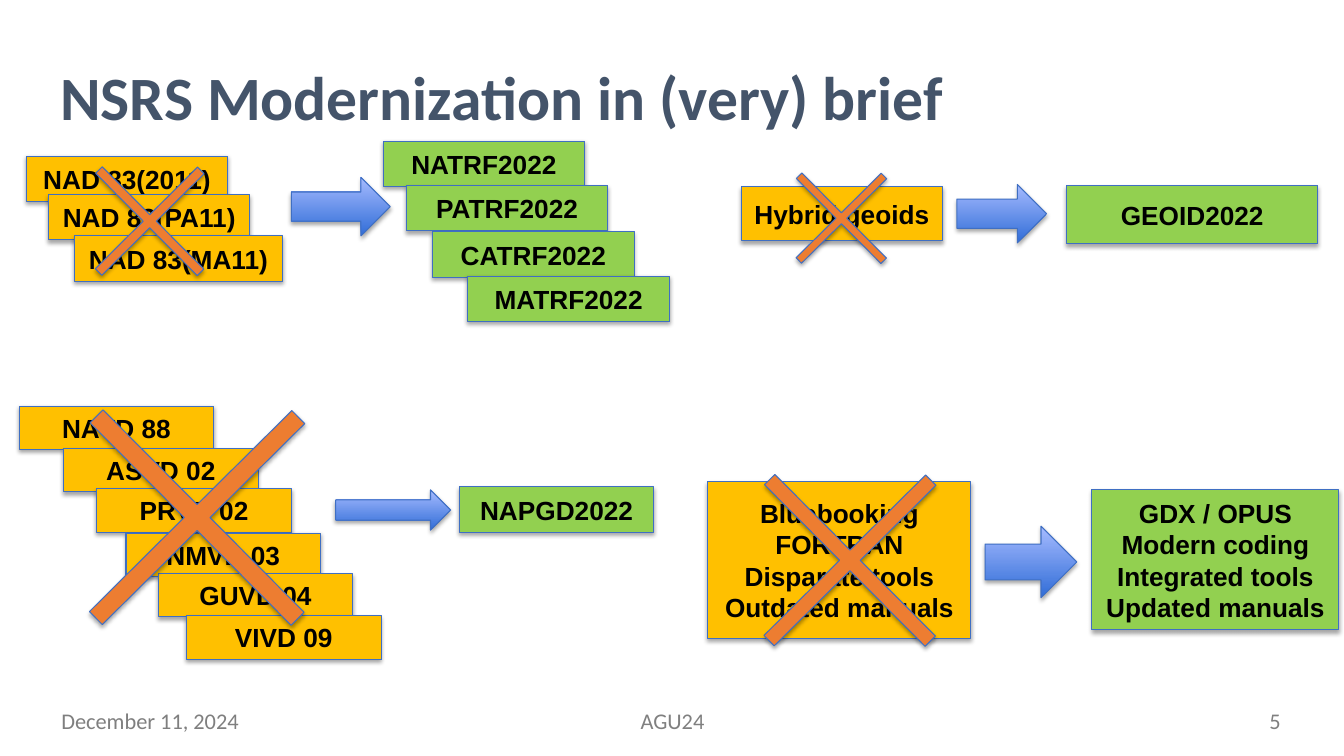
import pptx
import pptx.util
from lxml import etree
from pptx.dml.color import RGBColor
from pptx.enum.shapes import MSO_SHAPE
from pptx.enum.text import MSO_ANCHOR, PP_ALIGN
from pptx.oxml.ns import qn
from pptx.util import Inches

AMBER = RGBColor(0xFF, 0xC0, 0x00)
GREEN = RGBColor(0x92, 0xD0, 0x50)
ORANGE = RGBColor(0xED, 0x7D, 0x31)
OUTLINE = RGBColor(0x3F, 0x6F, 0xC3)
ARROW_DARK = RGBColor(0x31, 0x6D, 0xD7)
ARROW_LIGHT = RGBColor(0xA6, 0xBB, 0xFF)
BLACK = RGBColor(0x00, 0x00, 0x00)
SLATE = RGBColor(0x44, 0x54, 0x6A)
GRAY = RGBColor(0x80, 0x80, 0x80)
DATE_GRAY = RGBColor(0x7F, 0x7F, 0x7F)

TITLE = "NSRS Modernization in (very) brief"

# Boxes: lines of text, (left, top, width, height)
OLD_FRAMES = [
    (["NAD 83(2011)"], (0.26, 1.55, 2, 0.45)),
    (["NAD 83(PA11)"], (0.48, 1.93, 2, 0.45)),
    (["NAD 83(MA11)"], (0.74, 2.34, 2.06, 0.45)),
]
NEW_FRAMES = [
    (["NATRF2022"], (3.8, 1.4, 2, 0.45)),
    (["PATRF2022"], (4.03, 1.84, 2, 0.45)),
    (["CATRF2022"], (4.29, 2.3, 2, 0.45)),
    (["MATRF2022"], (4.64, 2.74, 2, 0.45)),
]
OLD_HEIGHTS = [
    (["NAVD 88"], (0.19, 4.03, 1.93, 0.43)),
    (["ASVD 02"], (0.63, 4.45, 1.93, 0.43)),
    (["PRVD 02"], (0.96, 4.85, 1.93, 0.43)),
    (["NMVD 03"], (1.25, 5.29, 1.93, 0.43)),
    (["GUVD 04"], (1.57, 5.69, 1.93, 0.43)),
    (["VIVD 09"], (1.85, 6.11, 1.93, 0.43)),
]
STACKS = [(OLD_FRAMES, AMBER), (NEW_FRAMES, GREEN), (OLD_HEIGHTS, AMBER)]
SINGLE_BOXES = [
    (["Hybrid geoids"], (7.35, 1.85, 2, 0.54), AMBER),
    (["GEOID2022"], (10.58, 1.84, 2.49, 0.58), GREEN),
    (["NAPGD2022"], (4.56, 4.83, 1.92, 0.45), GREEN),
    (["Bluebooking", "FORTRAN", "Disparate tools", "Outdated manuals"],
     (7.02, 4.78, 2.61, 1.55), AMBER),
    (["GDX / OPUS", "Modern coding", "Integrated tools", "Updated manuals"],
     (10.83, 4.86, 2.45, 1.39), GREEN),
]
ARROWS = [
    (2.89, 1.76, 0.98, 0.58),
    (9.49, 1.83, 0.89, 0.58),
    (3.33, 4.86, 1.14, 0.4),
    (9.77, 5.22, 0.91, 0.71),
]
# Crosses: left, top, side
CROSSES = [(0.77, 1.48, 1.43), (7.75, 1.57, 1.19), (0.54, 3.72, 2.83), (7.3, 4.43, 2.26)]
FOOTERS = [
    ("December 11, 2024", (0.51, 6.95, 3.11, 0.4), PP_ALIGN.LEFT, DATE_GRAY),
    ("AGU24", (4.56, 6.95, 4.22, 0.4), PP_ALIGN.CENTER, GRAY),
    ("5", (9.69, 6.95, 3.11, 0.4), PP_ALIGN.RIGHT, GRAY),
]


def write_lines(shape, lines, font_name, size, color, bold, alignment):
    frame = shape.text_frame
    frame.word_wrap = True
    frame.vertical_anchor = MSO_ANCHOR.MIDDLE
    frame.text = "\n".join(lines)
    for paragraph in frame.paragraphs:
        paragraph.alignment = alignment
        paragraph.font.name = font_name
        paragraph.font.size = pptx.util.Pt(size)
        paragraph.font.color.rgb = color
        paragraph.font.bold = bold


def add_outlined(shapes, kind, place, color=None):
    """Add a preset shape with the common outline and soft shadow."""
    shape = shapes.add_shape(kind, *map(Inches, place))
    if color is not None:
        shape.fill.solid()
        shape.fill.fore_color.rgb = color
    shape.line.color.rgb = OUTLINE
    shape.line.width = pptx.util.Pt(0.75)
    shape.shadow.inherit = False
    effects = shape.element.spPr.find(qn("a:effectLst"))
    shadow = etree.SubElement(effects, qn("a:outerShdw"), blurRad="39400",
                              dist="22900", dir="5400000", rotWithShape="0")
    shadow_color = etree.SubElement(shadow, qn("a:srgbClr"), val="000000")
    etree.SubElement(shadow_color, qn("a:alpha"), val="35000")
    return shape


def add_box(shapes, lines, place, color):
    box = add_outlined(shapes, MSO_SHAPE.RECTANGLE, place, color)
    write_lines(box, lines, "Arial", 18.7, BLACK, True, PP_ALIGN.CENTER)


def add_arrow(shapes, place):
    arrow = add_outlined(shapes, MSO_SHAPE.RIGHT_ARROW, place)
    arrow.fill.gradient()
    arrow.fill.gradient_angle = 90
    for stop, color, position in zip(arrow.fill.gradient_stops,
                                     (ARROW_DARK, ARROW_LIGHT), (0, 1)):
        stop.color.rgb = color
        stop.position = position


def add_cross(shapes, left, top, side):
    cross = add_outlined(shapes, MSO_SHAPE.CROSS, (left, top, side, side), ORANGE)
    cross.adjustments[0] = 0.468
    cross.rotation = 45.2


def main():
    presentation = pptx.Presentation()
    presentation.slide_width = Inches(13.33)
    presentation.slide_height = Inches(7.5)
    slide = presentation.slides.add_slide(presentation.slide_layouts[6])
    shapes = slide.shapes

    title = shapes.add_textbox(*map(Inches, (0.5, 0.5, 12.3, 1)))
    write_lines(title, [TITLE], "Calibri", 44, SLATE, True, PP_ALIGN.LEFT)
    title.text_frame.paragraphs[0].line_spacing = 0.9

    for place in ARROWS:
        add_arrow(shapes, place)
    for lines, place, color in SINGLE_BOXES:
        add_box(shapes, lines, place, color)
    for boxes, color in STACKS:
        group = shapes.add_group_shape()
        for lines, place in boxes:
            add_box(group.shapes, lines, place, color)
    for cross in CROSSES:
        add_cross(shapes, *cross)

    for text, place, alignment, color in FOOTERS:
        footer = shapes.add_textbox(*map(Inches, place))
        write_lines(footer, [text], "Calibri", 16, color, False, alignment)

    presentation.save("out.pptx")


if __name__ == "__main__":
    main()
